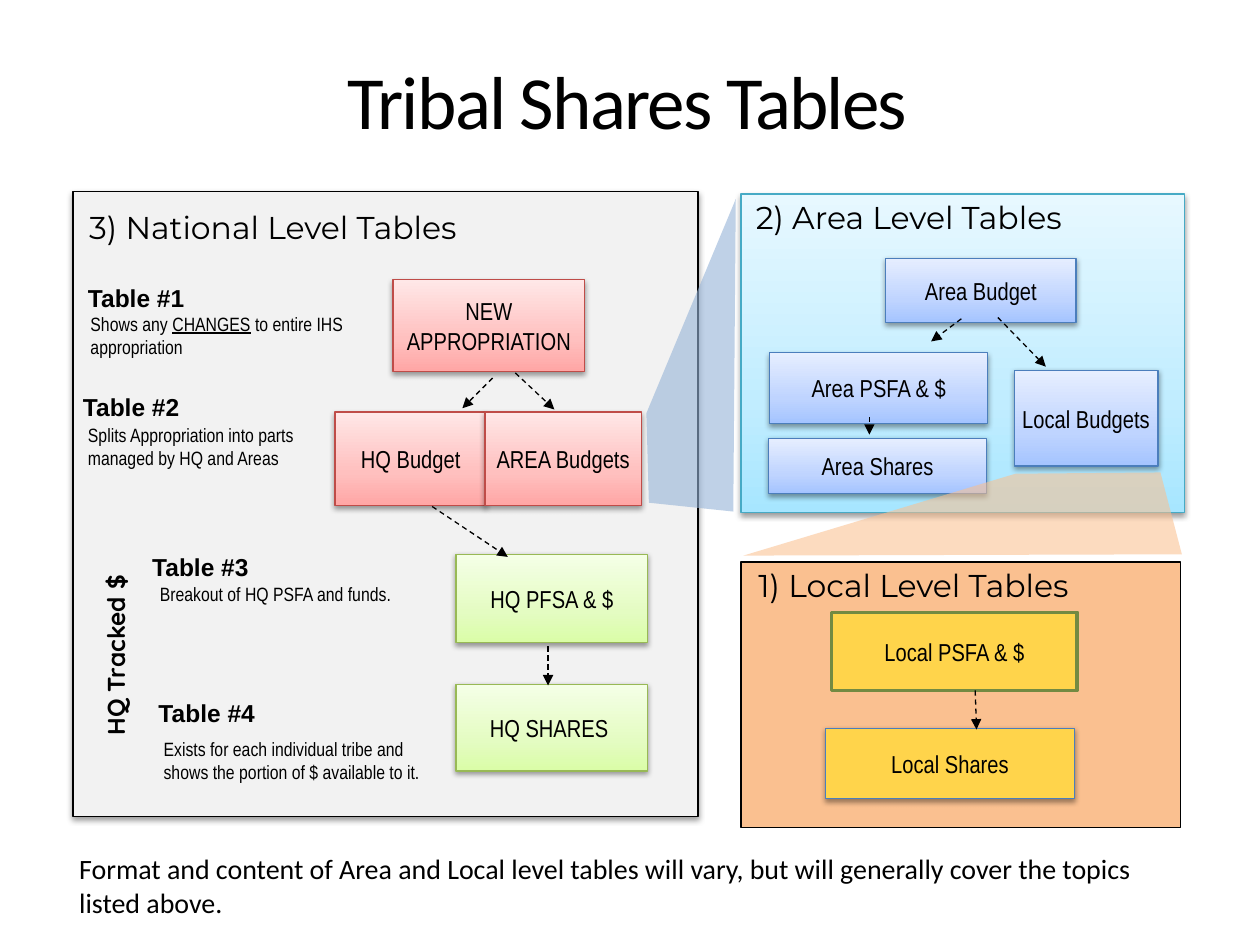
from copy import deepcopy

from lxml import etree
from pptx import Presentation
from pptx.dml.color import RGBColor
from pptx.enum import dml, shapes, text
from pptx.oxml.ns import qn
from pptx.util import Inches, Pt

BLACK = RGBColor(0x00, 0x00, 0x00)
LIGHT_GRAY = RGBColor(0xF2, 0xF2, 0xF2)
ORANGE = RGBColor(0xFA, 0xC0, 0x90)
YELLOW = RGBColor(0xFF, 0xD4, 0x4B)
OLIVE = RGBColor(0x73, 0x8A, 0x42)
AQUA_LINE = RGBColor(0x46, 0xAA, 0xC5)
RED_LINE = RGBColor(0xBF, 0x4C, 0x48)
GREEN_LINE = RGBColor(0x98, 0xB9, 0x55)
BLUE_LINE = RGBColor(0x4B, 0x7E, 0xBC)
FUNNEL_BLUE = RGBColor(0x95, 0xB3, 0xD7)
# Gradients run from the bottom of a box to its top
AQUA = (RGBColor(0xA7, 0xE6, 0xFF), RGBColor(0xC1, 0xED, 0xFF), RGBColor(0xE7, 0xF8, 0xFF))
RED = (RGBColor(0xFF, 0xA6, 0xA5), RGBColor(0xFF, 0xC0, 0xBF), RGBColor(0xFF, 0xE7, 0xE7))
GREEN = (RGBColor(0xDA, 0xFD, 0xA7), RGBColor(0xE4, 0xFC, 0xC2), RGBColor(0xF5, 0xFF, 0xE7))
BLUE = (RGBColor(0xA4, 0xC4, 0xFF), RGBColor(0xBF, 0xD4, 0xFF), RGBColor(0xE6, 0xEE, 0xFF))
GRADIENTS = (AQUA, RED, GREEN, BLUE)


def add_box(label, left, top, width, height, fill, line, line_width=0.75, shadow=True):
    """Add a rectangle; fill is one colour or three gradient colours."""
    box = slide.shapes.add_shape(shapes.MSO_SHAPE.RECTANGLE, Inches(left), Inches(top),
                                 Inches(width), Inches(height))
    properties = box._element.spPr
    if fill in GRADIENTS:
        box.fill.gradient()
        box.fill.gradient_angle = 90
        stops = properties.find(".//" + qn("a:gsLst"))
        stops.insert(1, deepcopy(stops[0]))
        for stop, color, position in zip(box.fill.gradient_stops, fill, (0, 0.35, 1)):
            stop.color.rgb = color
            stop.position = position
    else:
        box.fill.solid()
        box.fill.fore_color.rgb = fill
    box.line.color.rgb = line
    box.line.width = Pt(line_width)
    box.shadow.inherit = False
    if shadow:
        outer = etree.SubElement(properties.find(qn("a:effectLst")), qn("a:outerShdw"),
                                 blurRad="40000", dist="20000", dir="5400000", rotWithShape="0")
        color = etree.SubElement(outer, qn("a:srgbClr"), val=str(BLACK))
        etree.SubElement(color, qn("a:alpha"), val="38000")
    if label:
        box.text_frame.word_wrap = False
        box.text_frame.vertical_anchor = text.MSO_ANCHOR.MIDDLE
        paragraph = box.text_frame.paragraphs[0]
        paragraph.text = label
        paragraph.alignment = text.PP_ALIGN.CENTER
        paragraph.font.name = "Arial Narrow"
        paragraph.font.size = Pt(14)
        paragraph.font.color.rgb = BLACK


def add_label(runs, left, top, width, height, font, size, bold=False, middle=True):
    """Add a text box; every second run is underlined."""
    label = slide.shapes.add_textbox(Inches(left), Inches(top), Inches(width), Inches(height))
    frame = label.text_frame
    frame.word_wrap = True
    frame.vertical_anchor = text.MSO_ANCHOR.MIDDLE if middle else text.MSO_ANCHOR.TOP
    paragraph = frame.paragraphs[0]
    paragraph.font.name = font
    paragraph.font.size = Pt(size)
    paragraph.font.bold = bold
    paragraph.font.color.rgb = BLACK
    for index, words in enumerate(runs):
        run = paragraph.add_run()
        run.text = words
        if index % 2:
            run.font.underline = True
    return label


presentation = Presentation()
presentation.slide_width = Inches(10)
presentation.slide_height = Inches(7.5)
slide = presentation.slides.add_slide(presentation.slide_layouts[5])

title = slide.shapes.title
title.left, title.top, title.width, title.height = Inches(-0.02), Inches(0.25), Inches(10), Inches(1.08)
title.text_frame.vertical_anchor = text.MSO_ANCHOR.MIDDLE
title_paragraph = title.text_frame.paragraphs[0]
title_paragraph.alignment = text.PP_ALIGN.CENTER
title_run = title_paragraph.add_run()
title_run.text = "Tribal Shares Tables"
title_run.font.name = "Calibri"
title_run.font.size = Pt(42.9)
title_run.font.color.rgb = BLACK
title_run.font._element.set("spc", "-100")

# Panels, one per level
add_box("", 5.88, 4.46, 3.49, 2.11, ORANGE, BLACK, shadow=False)
add_box("", 5.88, 1.54, 3.52, 2.53, AQUA, AQUA_LINE)
add_box("", 0.58, 1.52, 4.96, 4.96, LIGHT_GRAY, BLACK)
for heading, left, top, width, height in (
    ("3) National Level Tables", 0.61, 1.46, 3.5, 0.68),
    ("2) Area Level Tables", 5.9, 1.48, 3.48, 0.49),
    ("1) Local Level Tables", 5.92, 4.44, 3.28, 0.41),
):
    add_label([heading], left, top, width, height, "Montserrat", 18)

# Budget boxes
for label, left, top, width, height, fill, line in (
    ("NEW\nAPPROPRIATION", 3.12, 2.22, 1.52, 0.73, RED, RED_LINE),
    ("HQ Budget", 2.66, 3.27, 1.2, 0.74, RED, RED_LINE),
    ("AREA Budgets", 3.85, 3.27, 1.24, 0.74, RED, RED_LINE),
    ("HQ PFSA & $", 3.62, 4.4, 1.52, 0.7, GREEN, GREEN_LINE),
    ("HQ SHARES ", 3.62, 5.43, 1.52, 0.69, GREEN, GREEN_LINE),
    ("Area Budget", 7.03, 2.05, 1.51, 0.51, BLUE, BLUE_LINE),
    ("Area PSFA & $", 6.11, 2.8, 1.73, 0.56, BLUE, BLUE_LINE),
    ("Area Shares", 6.1, 3.48, 1.73, 0.44, BLUE, BLUE_LINE),
    ("Local Budgets", 8.05, 2.94, 1.14, 0.76, BLUE, BLUE_LINE),
    ("Local Shares", 6.55, 5.78, 1.98, 0.56, YELLOW, BLUE_LINE),
):
    add_box(label, left, top, width, height, fill, line)
add_box("Local PSFA & $", 6.6, 4.86, 1.95, 0.62, YELLOW, OLIVE, line_width=2, shadow=False)

# Table names and descriptions
for name, left, top, width, height in (
    ("Table #1", 0.6, 2.18, 1.17, 0.37),
    ("Table #2", 0.56, 3.1, 1.18, 0.26),
    ("Table #3", 1.11, 4.31, 1.26, 0.38),
    ("Table #4", 1.16, 5.47, 1.26, 0.38),
):
    add_label([name], left, top, width, height, "Arial", 14, bold=True)
for runs, left, top, width, height in (
    (["Shows any ", "CHANGES", " to entire IHS appropriation"], 0.62, 2.43, 2.5, 0.47),
    (["Splits Appropriation into parts managed by HQ and Areas"], 0.6, 3.31, 2.06, 0.47),
    (["Breakout of HQ PSFA and funds."], 1.17, 4.57, 2.33, 0.29),
    (["Exists for each individual tribe and shows the portion of $ available to it."],
     1.2, 5.8, 2.31, 0.47),
):
    add_label(runs, left, top, width, height, "Arial Narrow", 11, middle=False)

tracked = add_label(["HQ Tracked $"], 0.06, 5.01, 1.71, 0.38, "Quicksand", 14, bold=True)
tracked.rotation = 270
tracked.text_frame.paragraphs[0].alignment = text.PP_ALIGN.CENTER

add_label(["Format and content of Area and Local level tables will vary, "
           "but will generally cover the topics listed above."],
          0.53, 6.71, 8.88, 0.64, "Calibri", 16, middle=False)

# Dashed flow arrows
for start_x, start_y, end_x, end_y in (
    (3.91, 3, 3.67, 3.24),
    (4.09, 2.96, 4.4, 3.25),
    (3.43, 4.02, 4.03, 4.42),
    (4.35, 5.13, 4.35, 5.44),
    (7.63, 2.53, 7.39, 2.71),
    (7.92, 2.52, 8.3, 2.91),
    (6.9, 3.31, 6.9, 3.45),
    (7.74, 5.48, 7.75, 5.79),
):
    arrow = slide.shapes.add_connector(shapes.MSO_CONNECTOR.STRAIGHT, Inches(start_x),
                                       Inches(start_y), Inches(end_x), Inches(end_y))
    arrow.line.color.rgb = BLACK
    arrow.line.width = Pt(0.75)
    arrow.line.dash_style = dml.MSO_LINE.DASH
    etree.SubElement(arrow.line._get_or_add_ln(), qn("a:tailEnd"), type="triangle")
    etree.SubElement(arrow._element.spPr, qn("a:effectLst"))

# Translucent funnels from a budget box to the panel that details it
for corners, color, alpha in (
    (((5.84, 1.58), (5.82, 4.06), (5.15, 3.99), (5.13, 3.28)), FUNNEL_BLUE, 60),
    (((5.9, 4.41), (9.38, 4.4), (9.21, 3.75), (8.06, 3.76)), ORANGE, 57),
):
    points = [(Inches(x), Inches(y)) for x, y in corners]
    builder = slide.shapes.build_freeform(*points[0])
    builder.add_line_segments(points[1:], close=True)
    funnel = builder.convert_to_shape()
    funnel.fill.solid()
    funnel.fill.fore_color.rgb = color
    fill_color = funnel._element.spPr.find(".//" + qn("a:srgbClr"))
    etree.SubElement(fill_color, qn("a:alpha"), val=str(alpha * 1000))
    funnel.line.fill.background()
    funnel.shadow.inherit = False

presentation.save("out.pptx")
